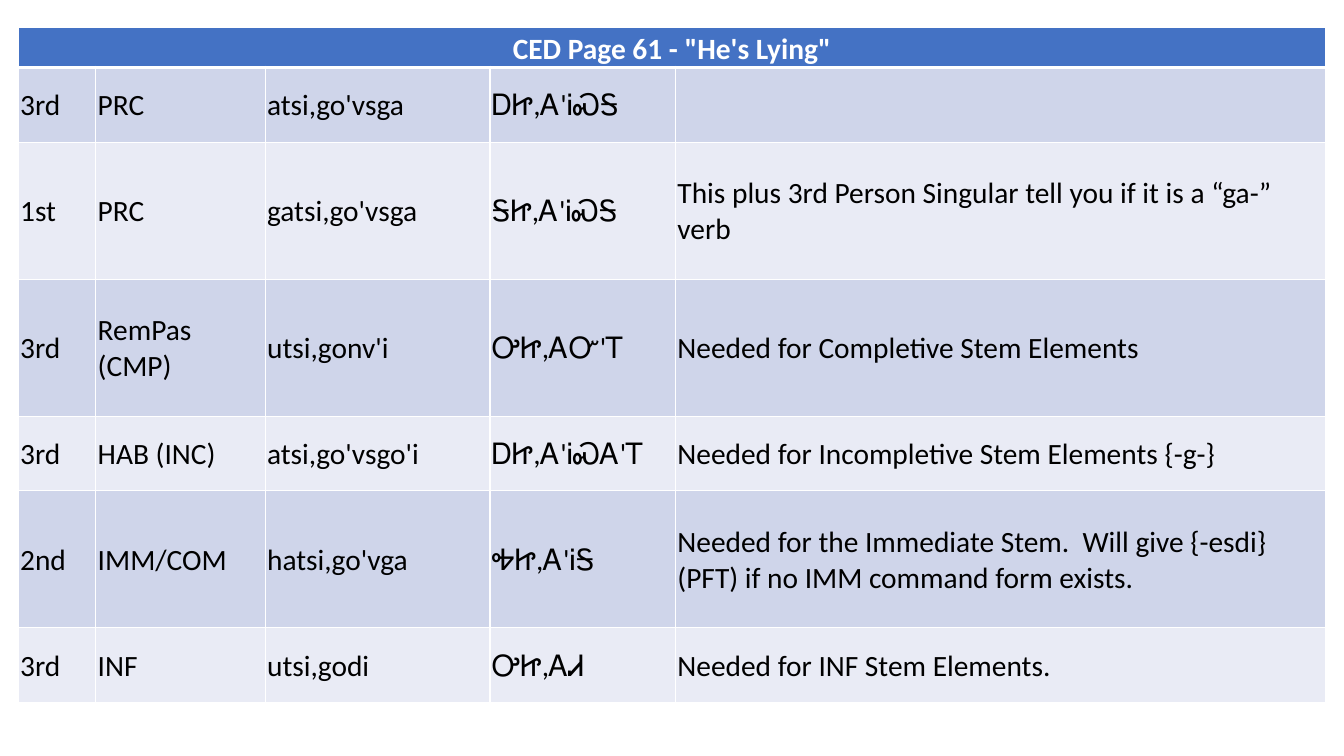
from lxml.etree import SubElement
from pptx import Presentation
from pptx.dml.color import RGBColor
from pptx.enum.text import MSO_ANCHOR, PP_ALIGN
from pptx.oxml.ns import qn
from pptx.util import Inches, Pt

WHITE = RGBColor(0xFF, 0xFF, 0xFF)
BLACK = RGBColor(0x00, 0x00, 0x00)
HEADER_BLUE = RGBColor(0x44, 0x72, 0xC4)
BANDS = [RGBColor(0xE9, 0xEB, 0xF5), RGBColor(0xCF, 0xD5, 0xEA)]

TITLE = "CED Page 61 - \"He's Lying\""
VERB_FORMS = [
    ("3rd", "PRC", "atsi,go'vsga", "ᎠᏥ,Ꭺ'ᎥᏍᎦ", ""),
    ("1st", "PRC", "gatsi,go'vsga", "ᎦᏥ,Ꭺ'ᎥᏍᎦ",
     "This plus 3rd Person Singular tell you if it is a “ga-” verb"),
    ("3rd", "RemPas (CMP)", "utsi,gonv'i", "ᎤᏥ,ᎪᏅ'Ꭲ",
     "Needed for Completive Stem Elements"),
    ("3rd", "HAB (INC)", "atsi,go'vsgo'i", "ᎠᏥ,Ꭺ'ᎥᏍᎪ'Ꭲ",
     "Needed for Incompletive Stem Elements {-g-}"),
    ("2nd", "IMM/COM", "hatsi,go'vga", "ᎭᏥ,Ꭺ'ᎥᎦ",
     "Needed for the Immediate Stem.  Will give {-esdi} (PFT) "
     "if no IMM command form exists."),
    ("3rd", "INF", "utsi,godi", "ᎤᏥ,ᎪᏗ", "Needed for INF Stem Elements."),
]
COLUMN_WIDTHS = [0.77, 1.68, 2.23, 1.84, 6.45]
ROW_HEIGHTS = [0.4, 0.74, 1.36, 1.36, 0.74, 1.36, 0.74]


def add_borders(cell, bottom_width):
    properties = cell._tc.get_or_add_tcPr()
    widths = {"a:lnL": 1, "a:lnR": 1, "a:lnT": 1, "a:lnB": bottom_width}
    for side, width in widths.items():
        line = SubElement(properties, qn(side), w=str(Pt(width)))
        fill = SubElement(line, qn("a:solidFill"))
        SubElement(fill, qn("a:srgbClr"), val=str(WHITE))


# Slide
deck = Presentation()
deck.slide_width = Inches(13.33)
deck.slide_height = Inches(7.5)
page = deck.slides.add_slide(deck.slide_layouts[6])

# Table grid
table = page.shapes.add_table(
    len(ROW_HEIGHTS), len(COLUMN_WIDTHS), Inches(0.18), Inches(0.27),
    Inches(sum(COLUMN_WIDTHS)), Inches(sum(ROW_HEIGHTS))).table
for column, width in zip(table.columns, COLUMN_WIDTHS):
    column.width = Inches(width)
for row, height in zip(table.rows, ROW_HEIGHTS):
    row.height = Inches(height)
table.cell(0, 0).merge(table.cell(0, len(COLUMN_WIDTHS) - 1))

# Title row, then one banded row per verb form
for row_index, texts in enumerate([(TITLE, "", "", "", "")] + VERB_FORMS):
    is_title = row_index == 0
    for column_index, text in enumerate(texts):
        cell = table.cell(row_index, column_index)
        cell.margin_left = cell.margin_right = cell.margin_top = Inches(0.02)
        cell.margin_bottom = Inches(0)
        cell.vertical_anchor = MSO_ANCHOR.BOTTOM if is_title else MSO_ANCHOR.MIDDLE
        add_borders(cell, 3 if is_title else 1)
        cell.fill.solid()
        cell.fill.fore_color.rgb = HEADER_BLUE if is_title else BANDS[row_index % 2]
        if not text:
            continue
        para = cell.text_frame.paragraphs[0]
        para.alignment = PP_ALIGN.CENTER if is_title else PP_ALIGN.LEFT
        span = para.add_run()
        span.text = text
        span.font.name = "Calibri"
        span.font.size = Pt(21)
        span.font.bold = is_title
        span.font.color.rgb = WHITE if is_title else BLACK

deck.save("out.pptx")
